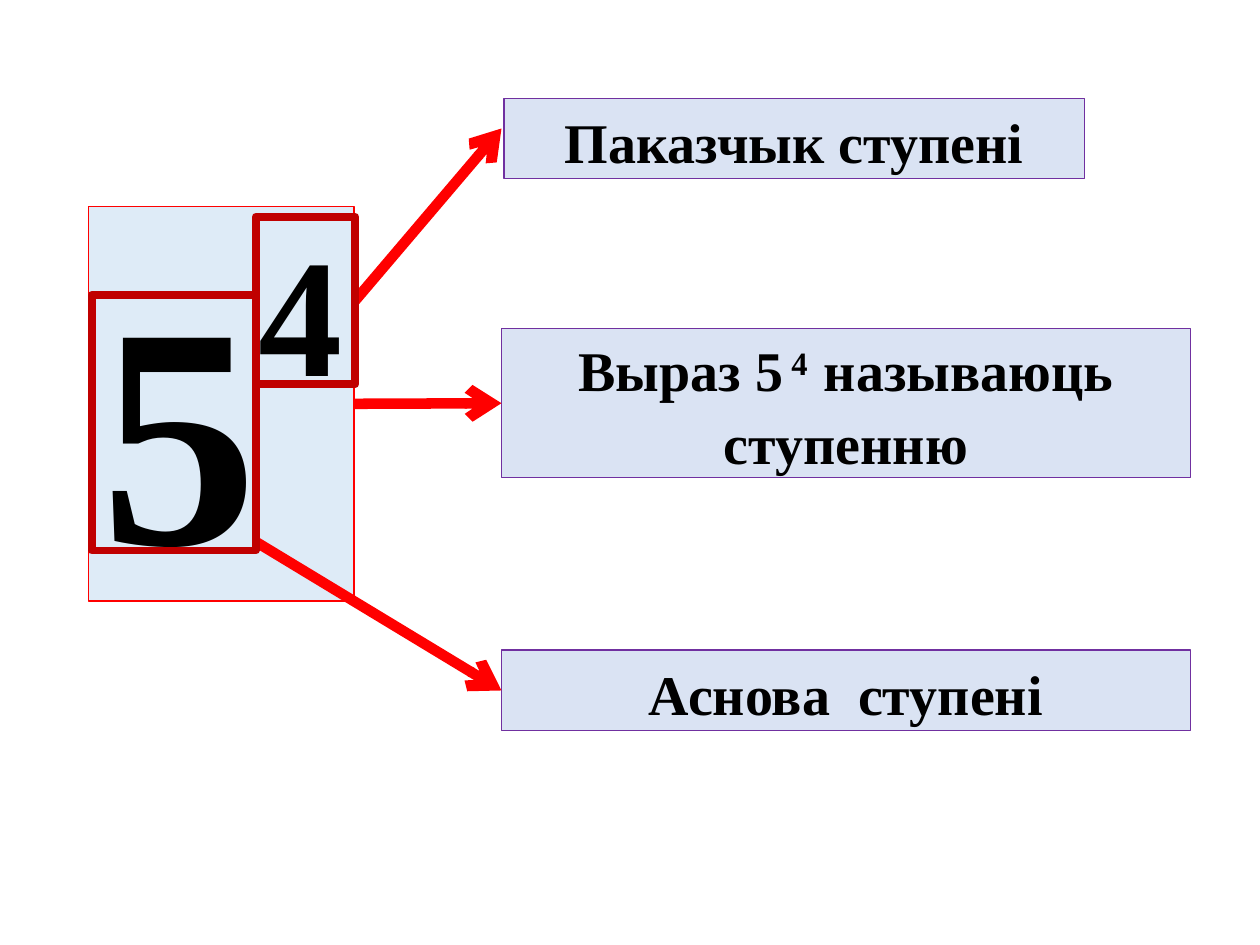
from dataclasses import dataclass
from typing import Optional

import pptx
import pptx.dml.color
import pptx.enum.shapes
import pptx.enum.text
import pptx.oxml
import pptx.oxml.ns
import pptx.util

RGBColor = pptx.dml.color.RGBColor
BLACK = RGBColor(0x00, 0x00, 0x00)
RED = RGBColor(0xFF, 0x00, 0x00)
CRIMSON = RGBColor(0xC0, 0x00, 0x00)
PURPLE = RGBColor(0x70, 0x30, 0xA0)
PALE = RGBColor(0xDA, 0xE3, 0xF3)
SKY = RGBColor(0xDE, 0xEB, 0xF7)

COLS, ROWS = 100, 75
WIDTH, HEIGHT = pptx.util.Inches(10), pptx.util.Inches(7.5)
FONT = "Times New Roman"
LEFT, RIGHT = 1, 3
ALIGN = pptx.enum.text.PP_ALIGN
ANCHOR = pptx.enum.text.MSO_ANCHOR


@dataclass
class Box:
    col: float
    row: float
    wide: float
    high: float
    fill: Optional[RGBColor] = None
    line: Optional[RGBColor] = None
    weight: float = 0.75
    runs: tuple = ()
    size: float = 32
    align: ALIGN = ALIGN.CENTER
    anchor: ANCHOR = ANCHOR.MIDDLE


def across(cols: float) -> int:
    return round(WIDTH * cols / COLS)


def down(rows: float) -> int:
    return round(HEIGHT * rows / ROWS)


def write(shape, box: Box) -> None:
    frame = shape.text_frame
    frame.word_wrap = True
    frame.vertical_anchor = box.anchor
    para = frame.paragraphs[0]
    para.alignment = box.align
    para.line_spacing = 1.08
    font = para.font
    font.name, font.size, font.bold = FONT, pptx.util.Pt(box.size), True
    font.color.rgb = BLACK
    for text, base in box.runs:
        run = para.add_run()
        run.text = text
        if base:
            run.font._element.set("baseline", str(base * 1000))


def draw(shapes, box: Box):
    place = across(box.col), down(box.row), across(box.wide), down(box.high)
    if box.line is None:
        shape = shapes.add_textbox(*place)
    else:
        shape = shapes.add_shape(pptx.enum.shapes.MSO_SHAPE.RECTANGLE, *place)
        shape.shadow.inherit = False
        shape.line.color.rgb = box.line
        shape.line.width = pptx.util.Pt(box.weight)
        if box.fill is None:
            shape.fill.background()
        else:
            shape.fill.solid()
            shape.fill.fore_color.rgb = box.fill
    if box.runs:
        write(shape, box)
    return shape


def point(shapes, start: tuple, end: tuple, source=None, goal=None):
    arrow = shapes.add_connector(
        pptx.enum.shapes.MSO_CONNECTOR.STRAIGHT,
        across(start[0]), down(start[1]), across(end[0]), down(end[1]))
    arrow.line.color.rgb = RED
    arrow.line.width = pptx.util.Pt(6)
    tail = pptx.oxml.parse_xml(
        f'<a:tailEnd {pptx.oxml.ns.nsdecls("a")} type="arrow"/>')
    arrow.line._get_or_add_ln().append(tail)
    arrow._element.spPr.append(pptx.oxml.parse_xml(
        f'<a:effectLst {pptx.oxml.ns.nsdecls("a")}/>'))
    if source is not None:
        arrow.begin_connect(source, RIGHT)
    if goal is not None:
        arrow.end_connect(goal, LEFT)
    return arrow


def label(col: float, row: float, wide: float, high: float, *runs) -> Box:
    return Box(col, row, wide, high, PALE, PURPLE, runs=runs)


def main() -> None:
    deck = pptx.Presentation()
    deck.slide_width, deck.slide_height = WIDTH, HEIGHT
    shapes = deck.slides.add_slide(deck.slide_layouts[6]).shapes

    draw(shapes, label(40, 7.8, 46.1, 6.4, ("Паказчык ступені", 0)))
    root = draw(shapes, label(39.8, 51.6, 54.7, 6.4, ("Аснова  ступені", 0)))

    group = shapes.add_group_shape()
    power = draw(group.shapes, Box(7, 16.4, 21.1, 31.3, SKY, RED,
                                   runs=(("5", 0),), size=180, align=ALIGN.LEFT))
    draw(group.shapes, Box(19.5, 14.8, 7, 17.2, runs=(("4", 0),), size=96,
                           align=ALIGN.LEFT, anchor=ANCHOR.TOP))

    whole = draw(shapes, label(39.8, 26.1, 54.7, 11.8, ("Выраз 5", 0),
                               (" 4  ", 30), ("называюць ступенню", 0)))
    upper = draw(shapes, Box(20.3, 17.2, 7.9, 13.3, line=CRIMSON, weight=4.5))
    lower = draw(shapes, Box(7.3, 23.4, 13, 20.3, line=CRIMSON, weight=4.5))

    point(shapes, (20.3, 43), (39.8, 54.8), goal=root)
    point(shapes, (28.1, 23.8), (39.8, 10.2), source=upper)
    point(shapes, (28.1, 32.1), (39.8, 32), source=power, goal=whole)
    for frame in (upper, lower):
        shapes._spTree.append(frame._element)

    deck.save("out.pptx")


if __name__ == "__main__":
    main()
